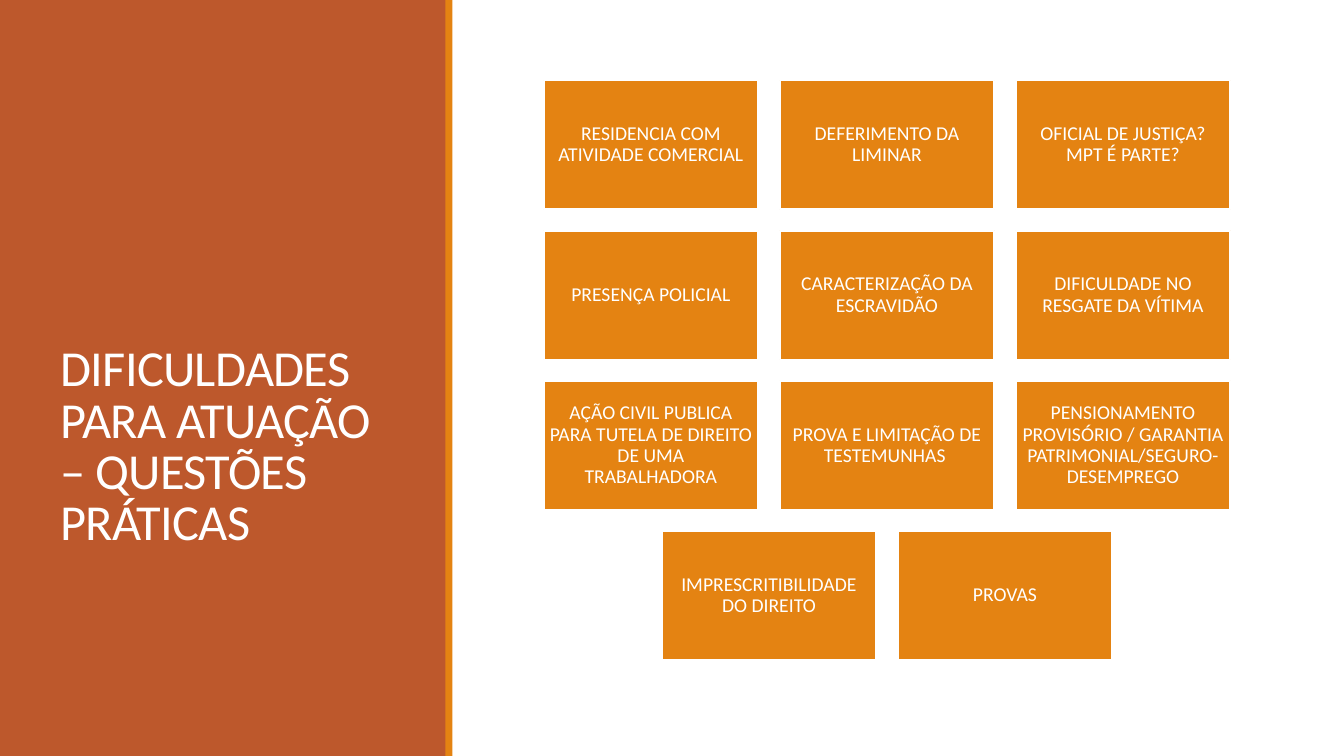
from dataclasses import dataclass

from pptx import Presentation
from pptx.dml.color import RGBColor
from pptx.enum.shapes import MSO_SHAPE
from pptx.enum.text import MSO_ANCHOR, MSO_AUTO_SIZE, PP_ALIGN
from pptx.shapes.autoshape import Shape
from pptx.slide import Slide
from pptx.text.text import TextFrame
from pptx.util import Pt


@dataclass(frozen=True)
class Theme:
    font: str = "Calibri"
    rust: RGBColor = RGBColor(0xBD, 0x58, 0x2C)
    orange: RGBColor = RGBColor(0xE4, 0x83, 0x12)
    white: RGBColor = RGBColor(0xFF, 0xFF, 0xFF)
    title_size: float = 36
    card_size: float = 14
    card_border: float = 1.25
    card_inset: float = 4.2


@dataclass(frozen=True)
class Box:
    left: float
    top: float
    width: float
    height: float


@dataclass(frozen=True)
class Band:
    box: Box
    color: RGBColor


THEME = Theme()
SLIDE_WIDTH, SLIDE_HEIGHT = 960, 540
TITLE = "DIFICULDADES PARA ATUAÇÃO – QUESTÕES PRÁTICAS"
TITLE_BOX = Box(36, 46.8, 252, 350.6)
BANDS = (
    Band(Box(0, 0, 319, SLIDE_HEIGHT), THEME.rust),
    Band(Box(318.2, 0, 5, SLIDE_HEIGHT), THEME.orange),
)
CARD_WIDTH, CARD_HEIGHT = 153.3, 92
COLUMN_PITCH, ROW_PITCH = 168.6, 107.3
GRID_CENTER, GRID_TOP = 633.6, 57.5
CARD_ROWS = (
    ("RESIDENCIA COM ATIVIDADE COMERCIAL", "DEFERIMENTO DA LIMINAR",
     "OFICIAL DE JUSTIÇA? MPT É PARTE?"),
    ("PRESENÇA POLICIAL", "CARACTERIZAÇÃO DA ESCRAVIDÃO",
     "DIFICULDADE NO RESGATE DA VÍTIMA"),
    ("AÇÃO CIVIL PUBLICA PARA TUTELA DE DIREITO DE UMA TRABALHADORA",
     "PROVA E LIMITAÇÃO DE TESTEMUNHAS ",
     "PENSIONAMENTO PROVISÓRIO / GARANTIA PATRIMONIAL/SEGURO-DESEMPREGO"),
    ("IMPRESCRITIBILIDADE DO DIREITO", "PROVAS"),
)


def add_rectangle(slide: Slide, box: Box, color: RGBColor) -> Shape:
    """Draw a filled rectangle without line or shadow."""
    shape = slide.shapes.add_shape(
        MSO_SHAPE.RECTANGLE, Pt(box.left), Pt(box.top), Pt(box.width), Pt(box.height))
    shape.shadow.inherit = False
    shape.fill.solid()
    shape.fill.fore_color.rgb = color
    shape.line.fill.background()
    return shape


def write_text(frame: TextFrame, text: str, size: float, alignment: PP_ALIGN,
               line_spacing: float, tracking: int = 0) -> None:
    """Write one white paragraph, with tracking in hundredths of a point."""
    frame.word_wrap = True
    frame.auto_size = MSO_AUTO_SIZE.NONE
    paragraph = frame.paragraphs[0]
    paragraph.alignment = alignment
    paragraph.line_spacing = line_spacing
    run = paragraph.add_run()
    run.text = text
    run.font.name = THEME.font
    run.font.size = Pt(size)
    run.font.color.rgb = THEME.white
    if tracking:
        run._r.get_or_add_rPr().set("spc", str(tracking))


def place_title(slide: Slide) -> None:
    """Move the title placeholder in front of the bands and fill it in."""
    title = slide.shapes.title
    slide.shapes._spTree.append(title._element)
    title.left, title.top = Pt(TITLE_BOX.left), Pt(TITLE_BOX.top)
    title.width, title.height = Pt(TITLE_BOX.width), Pt(TITLE_BOX.height)
    title.text_frame.vertical_anchor = MSO_ANCHOR.BOTTOM
    write_text(title.text_frame, TITLE, THEME.title_size, PP_ALIGN.LEFT, 0.85, -50)


def add_card(slide: Slide, box: Box, text: str) -> None:
    """Draw one orange card with centred text."""
    card = add_rectangle(slide, box, THEME.orange)
    card.line.color.rgb = THEME.white
    card.line.width = Pt(THEME.card_border)
    frame = card.text_frame
    frame.margin_left = frame.margin_right = Pt(THEME.card_inset)
    frame.margin_top = frame.margin_bottom = Pt(THEME.card_inset)
    frame.vertical_anchor = MSO_ANCHOR.MIDDLE
    write_text(frame, text, THEME.card_size, PP_ALIGN.CENTER, 0.9)


def add_cards(slide: Slide) -> None:
    """Lay the cards out in rows centred on the same axis."""
    for row, texts in enumerate(CARD_ROWS):
        row_width = (len(texts) - 1) * COLUMN_PITCH + CARD_WIDTH
        left = GRID_CENTER - row_width / 2
        top = GRID_TOP + row * ROW_PITCH
        for column, text in enumerate(texts):
            box = Box(left + column * COLUMN_PITCH, top, CARD_WIDTH, CARD_HEIGHT)
            add_card(slide, box, text)


def main() -> None:
    """Build and save the presentation."""
    presentation = Presentation()
    presentation.slide_width = Pt(SLIDE_WIDTH)
    presentation.slide_height = Pt(SLIDE_HEIGHT)
    slide = presentation.slides.add_slide(presentation.slide_layouts[5])
    for band in BANDS:
        add_rectangle(slide, band.box, band.color)
    place_title(slide)
    add_cards(slide)
    presentation.save("out.pptx")


if __name__ == "__main__":
    main()
